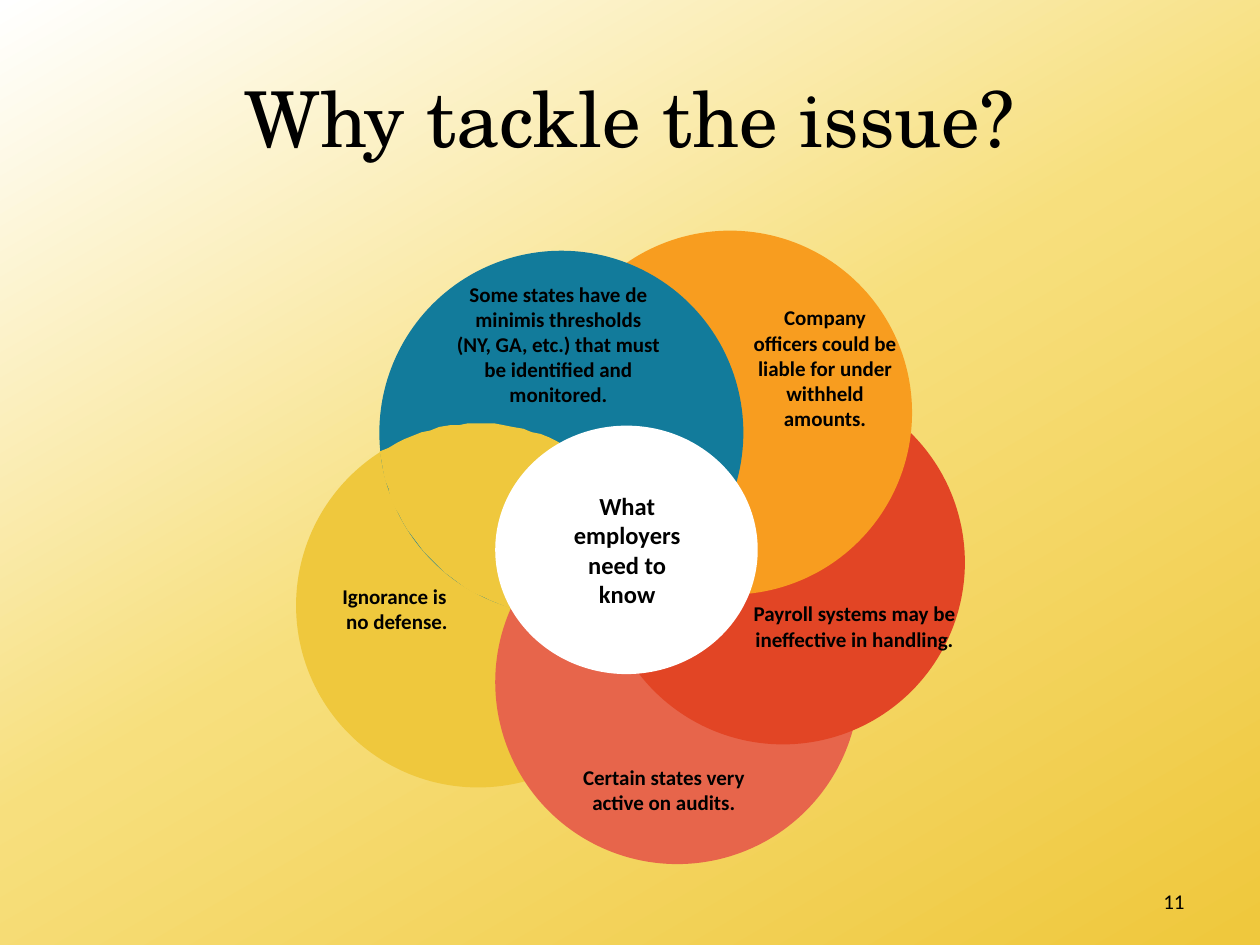
from copy import deepcopy
from math import acos, atan2, cos, hypot, pi, sin

from pptx import Presentation
from pptx.dml.color import RGBColor
from pptx.enum import shapes as kinds, text
from pptx.util import Pt

CENTER, RIGHT = text.PP_ALIGN.CENTER, text.PP_ALIGN.RIGHT
MIDDLE = text.MSO_ANCHOR.MIDDLE


def paint(shape, color):
    shape.shadow.inherit = False
    shape.fill.solid()
    shape.fill.fore_color.rgb = RGBColor.from_string(color)
    shape.line.fill.background()


def write(frame, words, size, font="Calibri", bold=False, align=CENTER):
    frame.text = words
    frame.word_wrap = True
    for para in frame.paragraphs:
        para.alignment = align
        para.font.size = Pt(size)
        para.font.name = font
        para.font.bold = bold
        para.font.color.rgb = RGBColor.from_string("000000")


deck = Presentation()
deck.slide_width, deck.slide_height = Pt(720), Pt(540)
slide = deck.slides.add_slide(deck.slide_layouts[5])

# Background gradient
back = slide.background.fill
back.gradient()
back.gradient_angle = 300
stops = back._fill._gradFill.gsLst
stops.append(deepcopy(stops[-1]))
tints = [(0, "FFFFFF"), (0.49, "F7DF7D"), (0.99, "EFC83D")]
for stop, (spot, color) in zip(back.gradient_stops, tints):
    stop.position = spot
    stop.color.rgb = RGBColor.from_string(color)

# Title
title = slide.shapes.title
title.left, title.top, title.width, title.height = Pt(36), Pt(21.6), Pt(648), Pt(90)
write(title.text_frame, "Why tackle the issue?", 44, "TeX Gyre Schola")
title.text_frame.vertical_anchor = MIDDLE

# Ring of equal circles, by centre, from back to front
R = 104
gold, blue = (273.2, 346), (320.8, 247.3)
ring = [
    (gold, "EFC83D"),
    ((387, 389.8), "E7654B"),
    ((447.4, 321.4), "E24525"),
    ((417.2, 235.8), "F89D1F"),
    (blue, "127B9B"),
]
for (x, y), color in ring:
    disc = slide.shapes.add_shape(
        kinds.MSO_SHAPE.OVAL, Pt(x - R), Pt(y - R), Pt(2 * R), Pt(2 * R))
    paint(disc, color)

# Lens where the gold circle passes over the blue one
dx, dy = blue[0] - gold[0], blue[1] - gold[1]
half = acos(hypot(dx, dy) / (2 * R))
aim = atan2(dy, dx)
steps = 40
edge = []
for (x, y), mid in [(gold, aim), (blue, aim + pi)]:
    for i in range(steps + 1):
        a = mid - half + 2 * half * i / steps
        edge.append((x + R * cos(a), y + R * sin(a)))
pen = slide.shapes.build_freeform(*edge[0], scale=Pt(1))
pen.add_line_segments(edge[1:], close=True)
paint(pen.convert_to_shape(), "EFC83D")

# Hub
hub = slide.shapes.add_shape(
    kinds.MSO_SHAPE.OVAL, Pt(283), Pt(243.2), Pt(150), Pt(142))
paint(hub, "FFFFFF")

# Labels: left, top, width, height, size, words
labels = [
    (260.6, 160.6, 117, 73, 12,
     "Some states have de minimis thresholds\v(NY, GA, etc.) that must be identified and monitored."),
    (430, 174.2, 83, 73, 12,
     "Company officers could be liable for under withheld amounts."),
    (430.6, 343.4, 115.4, 44, 12,
     "Payroll systems may be ineffective in handling."),
    (321.4, 437, 116, 29, 12, "Certain states very active on audits."),
    (180, 333.4, 93.6, 29, 12, "Ignorance is \vno defense."),
    (323.4, 280.4, 70, 68, 14, "What employers need to know"),
]
for x, y, w, h, size, words in labels:
    frame = slide.shapes.add_textbox(Pt(x), Pt(y), Pt(w), Pt(h)).text_frame
    frame.margin_left = frame.margin_right = 0
    frame.margin_top = frame.margin_bottom = 0
    write(frame, words, size, bold=True)

# Page number
page = slide.shapes.add_textbox(Pt(516), Pt(500.5), Pt(168), Pt(28.8)).text_frame
write(page, "11", 12, align=RIGHT)
page.vertical_anchor = MIDDLE

deck.save("out.pptx")
